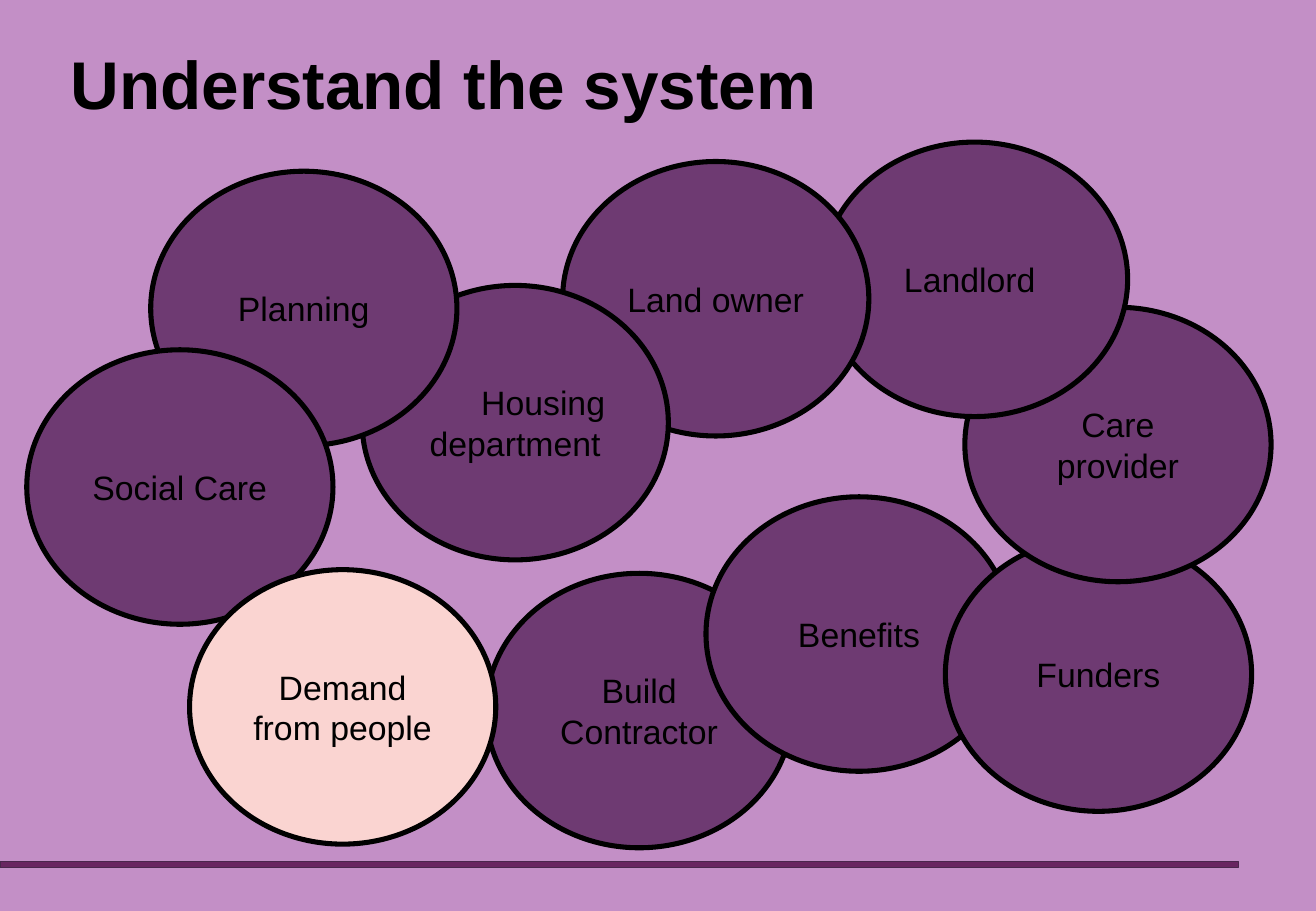
from dataclasses import dataclass

from pptx import Presentation
from pptx.dml.color import RGBColor
from pptx.enum.shapes import MSO_SHAPE as Shape
from pptx.enum.text import MSO_ANCHOR as Anchor, PP_ALIGN as Align
from pptx.util import Inches, Pt


@dataclass(frozen=True)
class Theme:
    font: str = "Arial"
    title_size: int = 40
    label_size: int = 20
    text: str = "000000"
    background: str = "C38FC6"
    agency: str = "6E3A72"
    demand: str = "FAD4D1"
    rule: str = "682560"
    rule_edge: str = "4A264C"


theme = Theme()


def add_run(p, text, size, bold=False):
    r = p.add_run()
    r.text = text
    r.font.name = theme.font
    r.font.size = Pt(size)
    r.font.bold = bold
    r.font.color.rgb = RGBColor.from_string(theme.text)


def add_filled(s, kind, box, fill, line, weight):
    sp = s.shapes.add_shape(kind, *map(Inches, box))
    sp.shadow.inherit = False
    sp.fill.solid()
    sp.fill.fore_color.rgb = RGBColor.from_string(fill)
    sp.line.color.rgb = RGBColor.from_string(line)
    sp.line.width = Pt(weight)
    return sp


prs = Presentation()
prs.slide_width, prs.slide_height = Inches(10.83), Inches(7.5)
s = prs.slides.add_slide(prs.slide_layouts[5])

# Background
s.background.fill.solid()
s.background.fill.fore_color.rgb = RGBColor.from_string(theme.background)

# Title
title = s.shapes.title
title.left, title.top = Inches(0.51), Inches(0.25)
title.width, title.height = Inches(9.81), Inches(0.71)
tf = title.text_frame
tf.vertical_anchor = Anchor.TOP
tf.margin_left, tf.margin_top = Inches(0.07), Inches(0.1)
p = tf.paragraphs[0]
p.alignment = Align.LEFT
add_run(p, "Understand the system", theme.title_size, bold=True)

# Footer rule
add_filled(s, Shape.RECTANGLE, (0, 7.09, 10.19, 0.05),
           theme.rule, theme.rule_edge, 0.75)

# Parts of the system, back to front: label, left, top, fill, first-line indent
ELLIPSE_W, ELLIPSE_H = 2.52, 2.26
parts = [
    ("Build Contractor", 4, 4.72, theme.agency, 0),
    ("Benefits", 5.81, 4.09, theme.agency, 0),
    ("Funders", 7.78, 4.42, theme.agency, 0),
    ("Care provider", 7.94, 2.53, theme.agency, 0),
    ("Landlord ", 6.76, 1.17, theme.agency, 0),
    ("Land owner", 4.63, 1.33, theme.agency, 0),
    ("Housing department", 2.98, 2.35, theme.agency, 0.46),
    ("Planning", 1.24, 1.41, theme.agency, 0),
    ("Social Care", 0.22, 2.88, theme.agency, 0),
    ("Demand from people", 1.56, 4.69, theme.demand, 0),
]
for label, left, top, fill, indent in parts:
    sp = add_filled(s, Shape.OVAL, (left, top, ELLIPSE_W, ELLIPSE_H),
                    fill, theme.text, 3)
    tf = sp.text_frame
    tf.word_wrap = True
    tf.vertical_anchor = Anchor.MIDDLE
    p = tf.paragraphs[0]
    p.alignment = Align.CENTER
    if indent:
        p._p.get_or_add_pPr().set("indent", str(Inches(indent)))
    add_run(p, label, theme.label_size)

prs.save("out.pptx")
